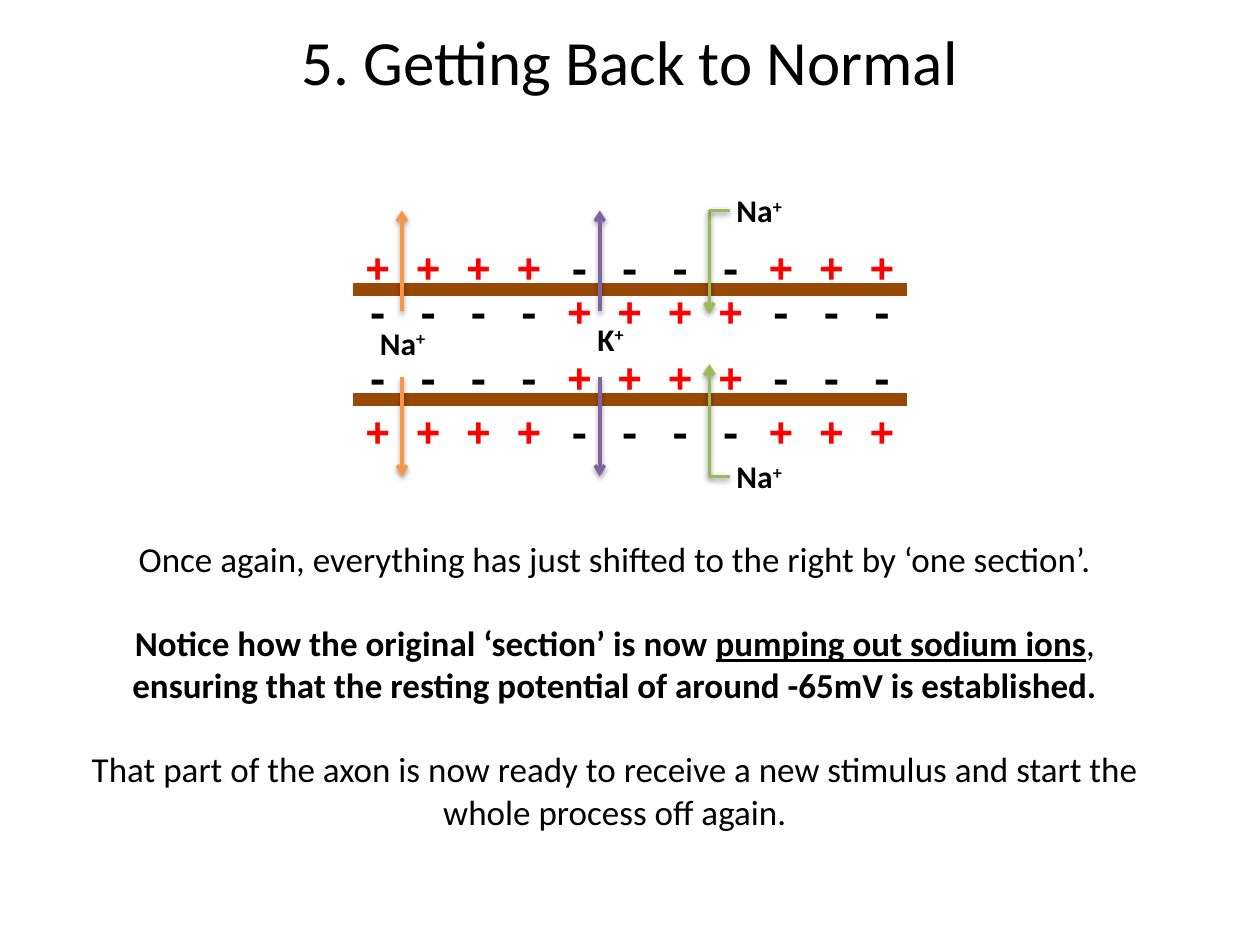
from dataclasses import dataclass

from lxml.etree import SubElement
from pptx import Presentation
from pptx.dml.color import RGBColor
from pptx.enum.shapes import MSO_CONNECTOR
from pptx.enum.text import MSO_ANCHOR, PP_ALIGN
from pptx.oxml.ns import qn
from pptx.util import Emu, Inches, Pt


@dataclass(frozen=True)
class Theme:
    """Colours, fonts and type sizes of the slide."""
    text: str = "000000"
    positive: str = "FF0000"
    membrane: str = "984807"
    sodium_in: str = "9BBB59"
    potassium: str = "8064A2"
    sodium_out: str = "F79646"
    font: str = "Calibri"
    mono: str = "Courier New"
    title: int = 36
    charge: int = 24
    body: int = 20
    label: int = 18


THEME = Theme()
COLS, ROWS = 100, 75
CELL = Inches(0.1)
LEFT, RIGHT = 28, 72
OUTSIDE = (("+", 4), ("-", 4), ("+", 3))
INSIDE = (("-", 4), ("+", 4), ("-", 3))


def grid(*cells):
    """Turn grid columns and rows into lengths."""
    return [Emu(round(c * CELL)) for c in cells]


def style(font, size, name=THEME.font, color=THEME.text, bold=None):
    """Set the look of a font."""
    font.name, font.size, font.bold = name, Pt(size), bold
    font.color.rgb = RGBColor.from_string(color)


def add_text(slide, box, align=PP_ALIGN.CENTER, anchor=MSO_ANCHOR.TOP):
    """Add a wrapping text box and return its text frame."""
    tf = slide.shapes.add_textbox(*grid(*box)).text_frame
    tf.word_wrap = True
    tf.vertical_anchor = anchor
    tf.paragraphs[0].alignment = align
    return tf


def add_run(p, text, bold=None, underline=None):
    """Append a run to a paragraph."""
    r = p.add_run()
    r.text = text
    r.font.bold, r.font.underline = bold, underline
    return r


def add_title(slide, text):
    """Add the slide title."""
    tf = add_text(slide, (5, 2.9, 90, 3.8), anchor=MSO_ANCHOR.MIDDLE)
    p = tf.paragraphs[0]
    p.text = text
    style(p.font, THEME.title)


def add_body(slide, paragraphs):
    """Add the explanation, one line apart between paragraphs."""
    tf = add_text(slide, (5.9, 42.2, 85.8, 24.6))
    for i, runs in enumerate(paragraphs):
        p = tf.add_paragraph() if i else tf.paragraphs[0]
        p.alignment = PP_ALIGN.CENTER
        p.space_before = Pt(24 if i else 0)
        style(p.font, THEME.body)
        for run in runs:
            add_run(p, *run)


def add_ion(slide, symbol, col, row):
    """Add an ion label with a raised plus sign."""
    p = add_text(slide, (col, row, 7.9, 4)).paragraphs[0]
    style(p.font, THEME.label, bold=True)
    add_run(p, symbol, True)
    add_run(p, "+", True).font._element.set("baseline", "30000")


def add_charges(slide, row, groups):
    """Add a row of charges, coloured by sign."""
    p = add_text(slide, (LEFT, row, 45.7, 5), PP_ALIGN.LEFT).paragraphs[0]
    for i, (sign, count) in enumerate(groups):
        r = add_run(p, (" " if i else "") + " ".join(sign * count))
        color = THEME.positive if sign == "+" else THEME.text
        style(r.font, THEME.charge, THEME.mono, color, True)


def add_line(slide, start, end, color, width=2, arrow=False, shadow=True):
    """Add a straight line with optional arrowhead and soft shadow."""
    line = slide.shapes.add_connector(
        MSO_CONNECTOR.STRAIGHT, *grid(*start, *end))
    line.line.color.rgb = RGBColor.from_string(color)
    line.line.width = Pt(width)
    if arrow:
        SubElement(line.line._get_or_add_ln(), qn("a:tailEnd"), type="arrow")
    effects = SubElement(line._element.spPr, qn("a:effectLst"))
    if shadow:
        outer = SubElement(effects, qn("a:outerShdw"), blurRad=str(Pt(3.1)),
                           dist=str(Pt(1.6)), dir="5400000", rotWithShape="0")
        black = SubElement(outer, qn("a:srgbClr"), val="000000")
        SubElement(black, qn("a:alpha"), val="38000")


def add_membranes(slide):
    """Add both membranes with the charges on either side."""
    for row in (23, 31.7):
        add_line(slide, (LEFT, row), (RIGHT, row), THEME.membrane, 7.5,
                 shadow=False)
    for row, groups in ((18.7, OUTSIDE), (22.2, INSIDE),
                        (27.4, INSIDE), (31.7, OUTSIDE)):
        add_charges(slide, row, groups)


def add_flows(slide):
    """Add the ion flows through the upper and lower membranes."""
    for outer, inner, tip in ((16.7, 24.7, 24.9), (37.8, 29.9, 28.9)):
        add_line(slide, (56.3, outer), (56.3, tip), THEME.sodium_in,
                 arrow=True)
        add_line(slide, (56.3, outer), (57.9, outer), THEME.sodium_in)
        for col, color in ((47.6, THEME.potassium), (31.9, THEME.sodium_out)):
            add_line(slide, (col, inner), (col, outer), color, arrow=True)


def main():
    """Build and save the slide."""
    prs = Presentation()
    prs.slide_width, prs.slide_height = grid(COLS, ROWS)
    slide = prs.slides.add_slide(prs.slide_layouts[6])
    add_title(slide, "5. Getting Back to Normal")
    add_body(slide, (
        [("Once again, everything has just shifted to the right by "
          "‘one section’.",)],
        [("Notice how the original ‘section’ is now ", True),
         ("pumping out sodium ions", True, True),
         (", ",),
         ("ensuring that the resting potential of around -65mV is "
          "established.", True)],
        [("That part of the axon is now ready to receive a new stimulus "
          "and start the whole process off again.",)],
    ))
    add_membranes(slide)
    for ion in (("Na", 56.3, 14.7), ("Na", 56.3, 35.8),
                ("K", 44.5, 24.9), ("Na", LEFT, 25.2)):
        add_ion(slide, *ion)
    add_flows(slide)
    prs.save("out.pptx")


if __name__ == "__main__":
    main()
